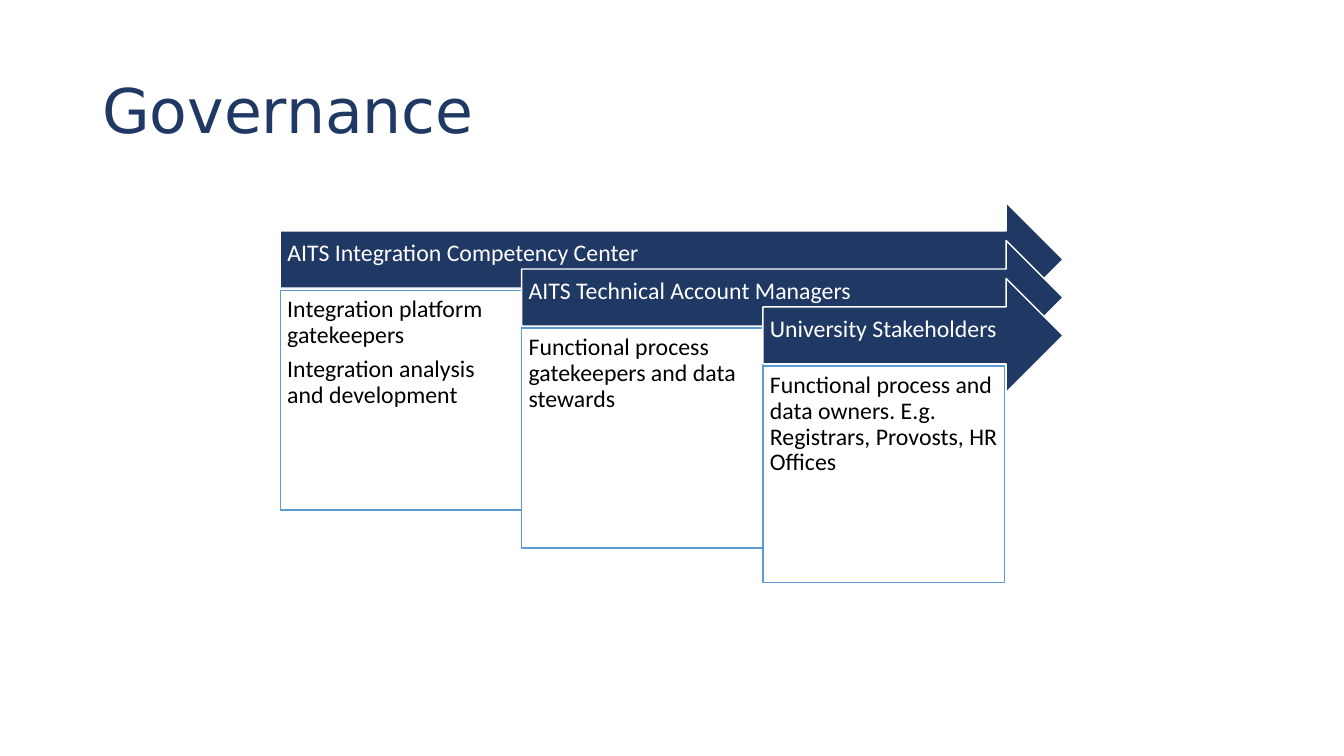
from pptx import Presentation
from pptx.dml.color import RGBColor
from pptx.enum.shapes import MSO_SHAPE as Shape
from pptx.enum.text import MSO_ANCHOR as Anchor, PP_ALIGN as Align
from pptx.util import Pt

NAVY, BLUE, WHITE, BLACK = "203864", "5B9BD5", "FFFFFF", "000000"
LEFT, TOP, RIGHT = 200.2, 144.7, 759.4
STEP, DROP = 172.4, 27.1
HIGH, BODY = 81.4, 62.6

ROLES = [
    ("AITS Integration Competency Center",
     ["Integration platform gatekeepers",
      "Integration analysis and development"], 157),
    ("AITS Technical Account Managers",
     ["Functional process gatekeepers and data stewards"], 157),
    ("University Stakeholders",
     ["Functional process and data owners. E.g. Registrars, Provosts, "
      "HR Offices"], 154.8),
]


def color(code):
    """Turn a hex string into a colour."""
    return RGBColor.from_string(code)


def apply(item, values):
    """Set attributes from a dict of format values."""
    for name, value in values.items():
        setattr(item, name, value)


def write(shape, lines, size, face, ink, anchor, pads):
    """Fill a shape with left-aligned paragraphs."""
    frame = shape.text_frame
    sides = ("margin_left", "margin_top", "margin_right", "margin_bottom")
    apply(frame, {"word_wrap": True, "vertical_anchor": anchor,
                  **{side: Pt(pad) for side, pad in zip(sides, pads)}})
    frame.text = "\n".join(lines)
    for para in frame.paragraphs:
        apply(para, {"alignment": Align.LEFT, "line_spacing": 0.9,
                     "space_after": Pt(6 if len(lines) > 1 else 0)})
        apply(para.font, {"size": Pt(size), "name": face})
        para.font.color.rgb = color(ink)


def block(slide, kind, area, fill, edge):
    """Draw a filled shape with a thin outline."""
    shape = slide.shapes.add_shape(kind, *map(Pt, area))
    shape.shadow.inherit = False
    shape.fill.solid()
    shape.fill.fore_color.rgb = color(fill)
    shape.line.color.rgb = color(edge)
    shape.line.width = Pt(1)
    return shape


def title(slide, text):
    """Add the slide title."""
    box = slide.shapes.add_textbox(*map(Pt, (66, 28.8, 828, 104.4)))
    write(box, [text], 44, "DejaVu Sans", NAVY, Anchor.MIDDLE,
          (7.2, 3.6, 7.2, 3.6))


def role(slide, rank, name, tasks, depth):
    """Add one arrow and the task box below it."""
    left, top = LEFT + rank * STEP, TOP + rank * DROP
    arrow = block(slide, Shape.RIGHT_ARROW, (left, top, RIGHT - left, HIGH),
                  NAVY, WHITE)
    write(arrow, [name], 17, "Calibri", WHITE, Anchor.MIDDLE,
          (5, 5, 20, 13))
    card = block(slide, Shape.RECTANGLE, (left, top + BODY, STEP, depth),
                 WHITE, BLUE)
    write(card, tasks, 17, "Calibri", BLACK, Anchor.TOP, (5, 5, 5, 5))


def main():
    """Build and save the slide."""
    deck = Presentation()
    apply(deck, {"slide_width": Pt(960), "slide_height": Pt(540)})
    slide = deck.slides.add_slide(deck.slide_layouts[6])
    title(slide, "Governance")
    for rank, (name, tasks, depth) in enumerate(ROLES):
        role(slide, rank, name, tasks, depth)
    deck.save("out.pptx")


if __name__ == "__main__":
    main()
